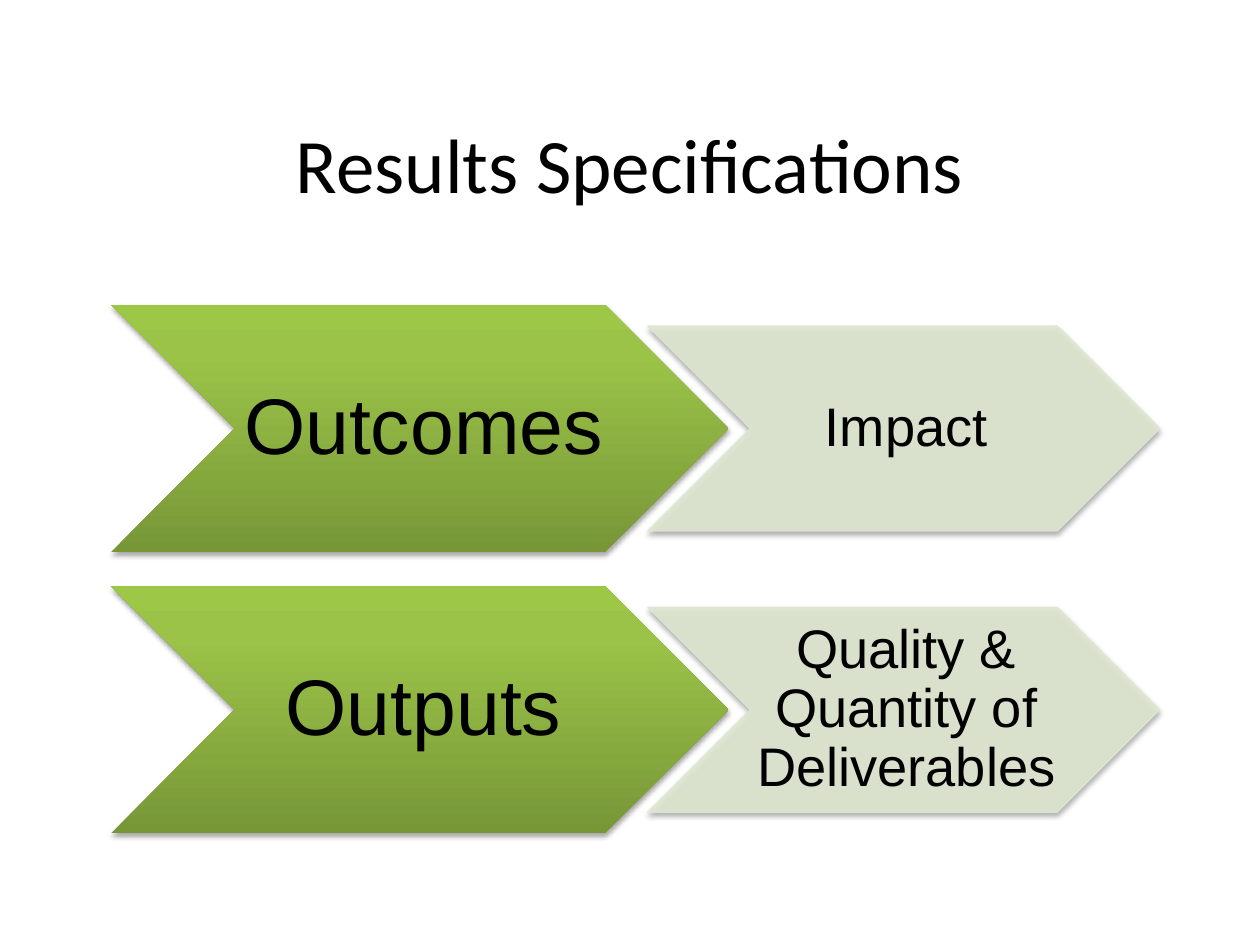
from dataclasses import dataclass

from lxml import etree
from pptx import Presentation
from pptx.dml.color import RGBColor
from pptx.enum.shapes import MSO_SHAPE
from pptx.enum.text import MSO_ANCHOR, PP_ALIGN
from pptx.oxml import parse_xml
from pptx.oxml.ns import nsdecls, qn
from pptx.shapes.autoshape import Shape
from pptx.slide import Slide
from pptx.util import Cm, Pt

CHEVRON = MSO_SHAPE.CHEVRON
MIDDLE = MSO_ANCHOR.MIDDLE
CENTER = PP_ALIGN.CENTER


@dataclass(frozen=True)
class Theme:
    text: str = "000000"
    gradient: tuple[tuple[int, str], ...] = ((0, "779737"), (80, "9BC348"), (100, "9DC746"))
    pale: str = "DEE7D1"
    pale_opacity: int = 90
    title_font: str = "Calibri"
    body_font: str = "Arial"
    title_size: int = 44
    result_size: int = 45
    measure_size: int = 31


@dataclass(frozen=True)
class Area:
    """A rectangle in centimetres."""
    left: float
    top: float
    width: float
    height: float


@dataclass(frozen=True)
class TextStyle:
    font: str
    size: int
    insets: tuple[float, float, float, float]
    line_spacing: float


@dataclass(frozen=True)
class Row:
    result: str
    measure: str


THEME = Theme()
TITLE_STYLE = TextStyle(THEME.title_font, THEME.title_size, (0.25, 0.13, 0.25, 0.13), 1.0)
RESULT_STYLE = TextStyle(THEME.body_font, THEME.result_size, (0.15, 0.08, 0, 0.08), 0.9)
MEASURE_STYLE = TextStyle(THEME.body_font, THEME.measure_size, (0.1, 0.05, 0, 0.05), 0.9)

TITLE_AREA = Area(1.9, 1.7, 21.6, 3.18)
ROWS = (Row("Outcomes", "Impact"), Row("Outputs", "Quality & Quantity of Deliverables"))
FIRST_TOP = 6.15
ROW_PITCH = 5.67
RESULT_LEFT, RESULT_WIDTH, RESULT_HEIGHT = 2.24, 12.45, 4.98
MEASURE_LEFT, MEASURE_WIDTH, MEASURE_HEIGHT = 13.06, 10.32, 4.13


def add_text(slide: Slide, area: Area, text: str, style: TextStyle) -> None:
    box = slide.shapes.add_textbox(Cm(area.left), Cm(area.top), Cm(area.width), Cm(area.height))
    frame = box.text_frame
    frame.word_wrap = True
    frame.vertical_anchor = MIDDLE
    (frame.margin_left, frame.margin_top,
     frame.margin_right, frame.margin_bottom) = map(Cm, style.insets)
    para = frame.paragraphs[0]
    para.alignment = CENTER
    para.line_spacing = style.line_spacing
    span = para.add_run()
    span.text = text
    span.font.name = style.font
    span.font.size = Pt(style.size)
    span.font.color.rgb = RGBColor.from_string(THEME.text)


def add_shadow(shape: Shape) -> None:
    shape.shadow.inherit = False
    effects = shape._element.spPr.find(qn("a:effectLst"))
    effects.append(parse_xml(
        f'<a:outerShdw {nsdecls("a")} blurRad="{Pt(3.1)}" dist="{Pt(1.8)}" dir="5400000" '
        'rotWithShape="0"><a:srgbClr val="000000"><a:alpha val="35000"/></a:srgbClr>'
        '</a:outerShdw>'))


def fill_gradient(shape: Shape) -> None:
    """Run the theme gradient from the bottom edge to the top."""
    shape.fill.gradient()
    shape.fill.gradient_angle = 90
    stops = shape._element.spPr.find(qn("a:gradFill")).find(qn("a:gsLst"))
    for stop in list(stops):
        stops.remove(stop)
    for position, color in THEME.gradient:
        stop = etree.SubElement(stops, qn("a:gs"), pos=str(position * 1000))
        etree.SubElement(stop, qn("a:srgbClr"), val=color)
    shape.line.fill.background()


def fill_pale(shape: Shape) -> None:
    """Give the fill and outline the same see-through colour."""
    shape.line.width = Pt(0.75)
    for fill in (shape.fill, shape.line.fill):
        fill.solid()
        fill.fore_color.rgb = RGBColor.from_string(THEME.pale)
    for color in shape._element.spPr.iter(qn("a:srgbClr")):
        if color.get("val") == THEME.pale:
            etree.SubElement(color, qn("a:alpha"), val=str(THEME.pale_opacity * 1000))


def add_chevron(slide: Slide, area: Area, text: str, style: TextStyle) -> Shape:
    """Draw a chevron and set its text between the notch and the point."""
    shape = slide.shapes.add_shape(
        CHEVRON, Cm(area.left), Cm(area.top), Cm(area.width), Cm(area.height))
    add_shadow(shape)
    text_area = Area(area.left + area.height / 2, area.top, area.width - area.height, area.height)
    add_text(slide, text_area, text, style)
    return shape


def add_row(slide: Slide, row: Row, top: float) -> None:
    result_area = Area(RESULT_LEFT, top, RESULT_WIDTH, RESULT_HEIGHT)
    measure_top = top + (RESULT_HEIGHT - MEASURE_HEIGHT) / 2
    measure_area = Area(MEASURE_LEFT, measure_top, MEASURE_WIDTH, MEASURE_HEIGHT)
    fill_gradient(add_chevron(slide, result_area, row.result, RESULT_STYLE))
    fill_pale(add_chevron(slide, measure_area, row.measure, MEASURE_STYLE))


def main() -> None:
    deck = Presentation()
    deck.slide_width, deck.slide_height = Cm(25.4), Cm(19.05)
    page = deck.slides.add_slide(deck.slide_layouts[6])
    add_text(page, TITLE_AREA, "Results Specifications", TITLE_STYLE)
    for index, row in enumerate(ROWS):
        add_row(page, row, FIRST_TOP + index * ROW_PITCH)
    deck.save("out.pptx")


if __name__ == "__main__":
    main()
